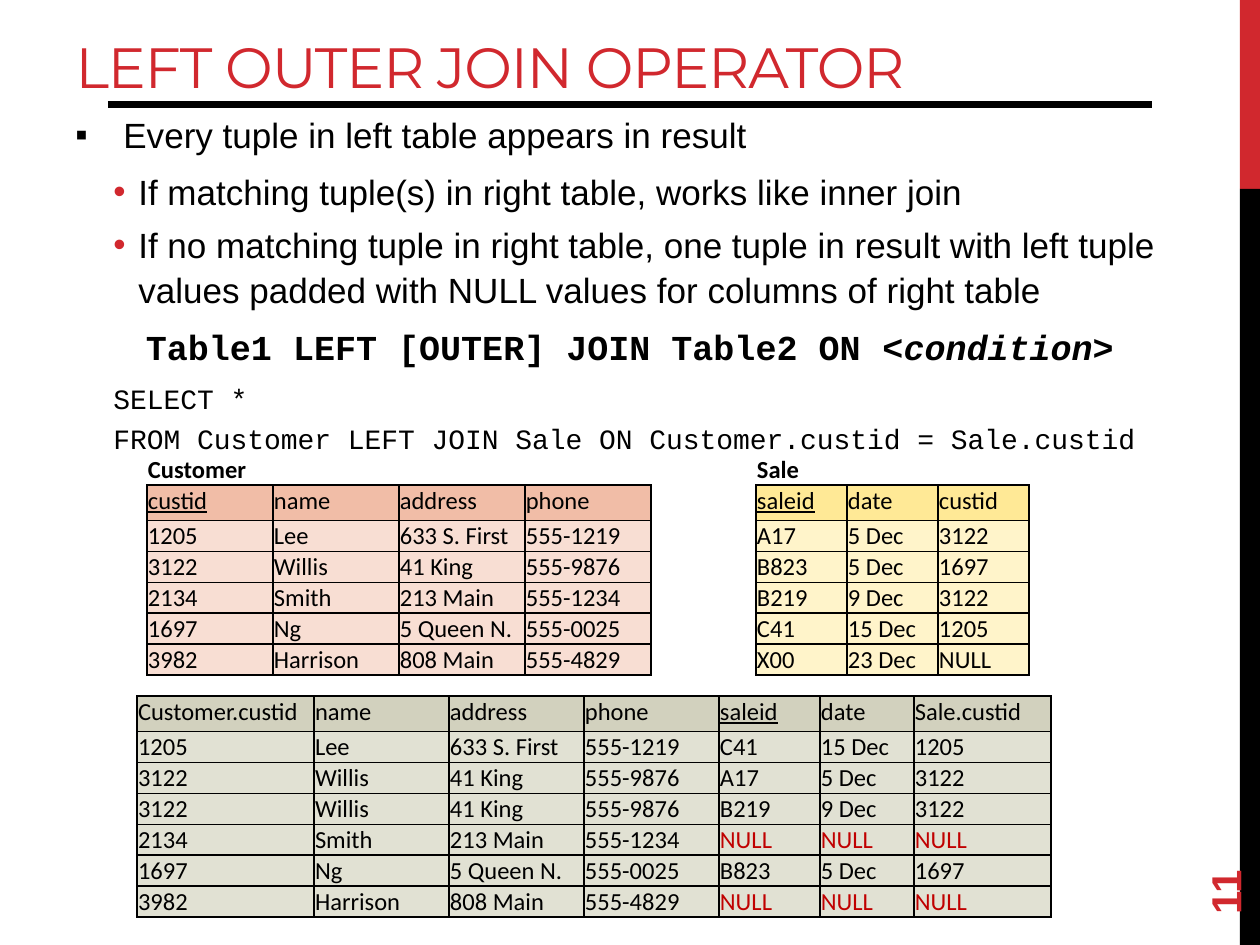
from lxml import etree
from pptx import Presentation
from pptx import util as u
from pptx.dml.color import RGBColor
from pptx.enum import shapes, text
from pptx.oxml import ns

PX = 914400 // 126
RED, BLACK = "D1282E", "000000"


def color(hex_value):
    return RGBColor.from_string(hex_value)


def add_run(p, content, hex_value=BLACK, **fmt):
    r = p.add_run()
    r.text = content
    for name, value in fmt.items():
        setattr(r.font, name, value)
    r.font.color.rgb = color(hex_value)
    return r


prs = Presentation()
prs.slide_width, prs.slide_height = 1260 * PX, 945 * PX
s = prs.slides.add_slide(prs.slide_layouts[5])

for top, height, fill in ((0, 189, RED), (189, 756, BLACK)):
    sp = s.shapes.add_shape(shapes.MSO_SHAPE.RECTANGLE, 1240 * PX, top * PX, 20 * PX, height * PX)
    sp.shadow.inherit = False
    sp.fill.solid()
    sp.fill.fore_color.rgb = color(fill)
    sp.line.fill.background()

rule = s.shapes.add_connector(shapes.MSO_CONNECTOR.STRAIGHT, 108 * PX, 105 * PX, 1152 * PX, 105 * PX)
rule.line.color.rgb = color(BLACK)
rule.line.width = u.Pt(4)
etree.SubElement(rule.element.spPr, ns.qn("a:effectLst"))

title = s.shapes.title
title.left, title.top, title.width, title.height = 63 * PX, 21 * PX, 1176 * PX, 85 * PX
tf = title.text_frame
tf.auto_size = text.MSO_AUTO_SIZE.NONE
tf.vertical_anchor = text.MSO_ANCHOR.BOTTOM
p = tf.paragraphs[0]
p.alignment = text.PP_ALIGN.LEFT
r = add_run(p, "LEFT OUTER JOIN OPERATOR", RED, name="Montserrat", size=u.Pt(32.4))
r.font._element.set("spc", "-60")

arial = dict(name="Arial", size=u.Pt(20))
syntax = dict(name="Courier New", size=u.Pt(20), bold=True)
code = dict(name="Courier New", size=u.Pt(16))
body = [
    (0, 48, -48, 4.8, ("▪", BLACK), [("Every tuple in left table appears in result", arial)]),
    (1, 63, -25, 2.4, ("•", RED), [("If matching tuple(s) in right table, works like inner join", arial)]),
    (1, 63, -25, 2.4, ("•", RED), [("If no matching tuple in right table, one tuple in result with left tuple "
                                    "values padded with NULL values for columns of right table", arial)]),
    (0, 21, 0, 4.8, None, [("Table1 LEFT [OUTER] JOIN Table2 ON ", syntax),
                           ("<condition> ", dict(syntax, italic=True))]),
    (1, 38, 0, 2.4, None, [("SELECT *", code)]),
    (1, 38, 0, 0, None, [("FROM Customer LEFT JOIN Sale ON Customer.custid = Sale.custid", code)]),
]
tf = s.shapes.add_textbox(63 * PX, 105 * PX, 1134 * PX, 378 * PX).text_frame
tf.word_wrap = True
for i, (level, margin, indent, gap, bullet, runs) in enumerate(body):
    p = tf.paragraphs[0] if i == 0 else tf.add_paragraph()
    p.level = level
    p.line_spacing = 1.06
    p.space_before = p.space_after = u.Pt(gap)
    if runs[0][1] is syntax:
        p.alignment = text.PP_ALIGN.CENTER
    pPr = p._p.get_or_add_pPr()
    pPr.set("marL", str(margin * PX))
    pPr.set("indent", str(indent * PX))
    if bullet:
        char, hex_value = bullet
        buClr = etree.SubElement(pPr, ns.qn("a:buClr"))
        etree.SubElement(buClr, ns.qn("a:srgbClr"), val=hex_value)
        etree.SubElement(pPr, ns.qn("a:buFont"), typeface="Arial")
        etree.SubElement(pPr, ns.qn("a:buChar"), char=char)
    else:
        etree.SubElement(pPr, ns.qn("a:buNone"))
    for content, fmt in runs:
        add_run(p, content, **fmt)

number = s.shapes.add_textbox(1134 * PX, 811 * PX, 181 * PX, 50 * PX)
number.rotation = 270
tf = number.text_frame
tf.word_wrap = True
tf.vertical_anchor = text.MSO_ANCHOR.MIDDLE
add_run(tf.paragraphs[0], "11", RED, name="Arial", size=u.Pt(24), bold=True)

customers = {
    "1205": ["Lee", "633 S. First", "555-1219"],
    "3122": ["Willis", "41 King", "555-9876"],
    "2134": ["Smith", "213 Main", "555-1234"],
    "1697": ["Ng", "5 Queen N.", "555-0025"],
    "3982": ["Harrison", "808 Main", "555-4829"],
}
sales = {
    "A17": ["5 Dec", "3122"],
    "B823": ["5 Dec", "1697"],
    "B219": ["9 Dec", "3122"],
    "C41": ["15 Dec", "1205"],
    "X00": ["23 Dec", "NULL"],
}
joined = []
for custid, details in customers.items():
    matches = [[saleid, *sale] for saleid, sale in sales.items() if sale[1] == custid]
    for match in matches or [["NULL"] * 3]:
        joined.append([custid, *details, *match])

tables = [
    (147, 454, [126] * 4, "Customer", ["custid", "name", "address", "phone"], "custid",
     [[k, *v] for k, v in customers.items()], "F1BDA7", "F8DED3", BLACK),
    (756, 454, [91] * 3, "Sale", ["saleid", "date", "custid"], "saleid",
     [[k, *v] for k, v in sales.items()], "FFE996", "FFF4CA", BLACK),
    (137, 696, [177, 135, 135, 135, 101, 94, 137], None,
     ["Customer.custid", "name", "address", "phone", "saleid", "date", "Sale.custid"], "saleid",
     joined, "D2D1BE", "E1E1D3", "C00000"),
]
for left, top, widths, caption, header, key, records, head_fill, row_fill, null_color in tables:
    rows = [header] + records
    if caption:
        rows.insert(0, [caption] + [""] * (len(widths) - 1))
    table = s.shapes.add_table(len(rows), len(widths), left * PX, top * PX,
                               sum(widths) * PX, (31 * len(rows) + 4) * PX).table
    table.first_row = table.horz_banding = False
    for column, width in zip(table.columns, widths):
        column.width = width * PX
    for row, values in zip(table.rows, rows):
        is_head, is_caption = values is header, values[0] == caption
        row.height = (35 if is_head else 31) * PX
        for cell, value in zip(row.cells, values):
            cell.vertical_anchor = text.MSO_ANCHOR.BOTTOM
            cell.margin_left = cell.margin_right = cell.margin_top = PX
            cell.margin_bottom = 5 * PX if is_head else 0
            tcPr = cell._tc.get_or_add_tcPr()
            for side in "B" if is_caption else "LRTB":
                ln = etree.SubElement(tcPr, ns.qn(f"a:ln{side}"), w=str(u.Pt(1)))
                line_fill = etree.SubElement(ln, ns.qn("a:solidFill"))
                etree.SubElement(line_fill, ns.qn("a:srgbClr"), val=BLACK)
            if is_caption:
                cell.fill.background()
            else:
                cell.fill.solid()
                cell.fill.fore_color.rgb = color(head_fill if is_head else row_fill)
            if value:
                add_run(cell.text_frame.paragraphs[0], value, null_color if value == "NULL" else BLACK,
                        name="Calibri", size=u.Pt(14), bold=is_caption, underline=is_head and value == key)
    if caption:
        table.cell(0, 0).merge(table.cell(0, len(widths) - 1))

prs.save("out.pptx")
